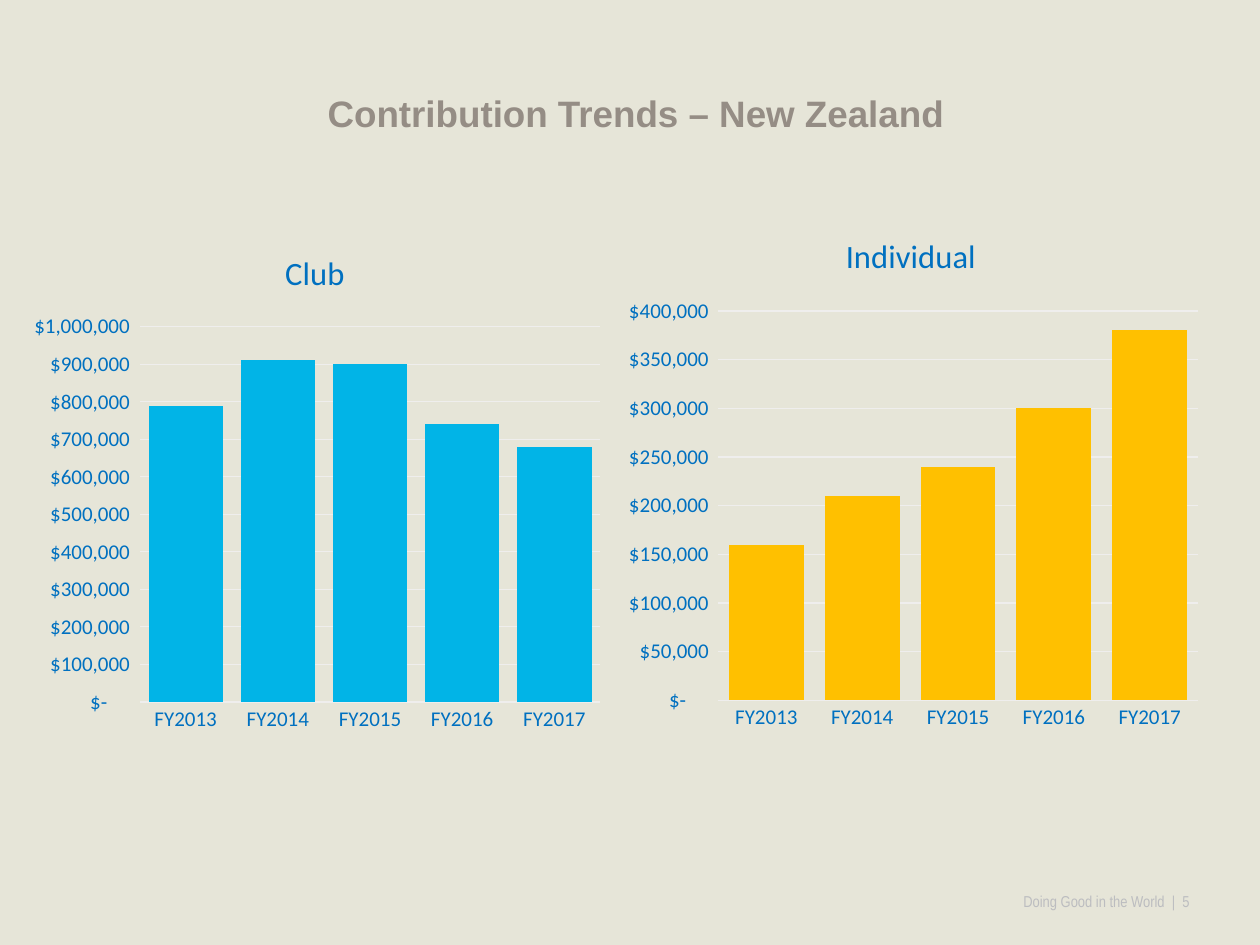
from dataclasses import dataclass

from pptx import Presentation
from pptx.chart.data import CategoryChartData
from pptx.dml.color import RGBColor
from pptx.enum.chart import XL_CHART_TYPE, XL_TICK_MARK
from pptx.enum.text import MSO_ANCHOR, PP_ALIGN
from pptx.util import Inches, Pt


@dataclass(frozen=True)
class Theme:
    back: str = "E6E5D8"
    head: str = "958D85"
    foot: str = "BCBDC0"
    label: str = "0070C0"
    grid: str = "EFEEED"
    club: str = "01B4E7"
    person: str = "FFC000"
    head_size: float = 21
    foot_size: float = 9
    name_size: float = 18.6
    axis_size: float = 12
    base_size: float = 10


THEME = Theme()
YEARS = [f"FY{year}" for year in range(2013, 2018)]
MONEY = '_("$"* #,##0_);_("$"* \\(#,##0\\);_("$"* "-"??_);_(@_)'


def color(code):
    return RGBColor.from_string(code)


def style(font, face, size, code, bold=False):
    font.name = face
    font.size = Pt(size)
    font.bold = bold
    font.color.rgb = color(code)


def place(shape, left, top, width, height):
    shape.left, shape.top = Inches(left), Inches(top)
    shape.width, shape.height = Inches(width), Inches(height)


def add_title(slide, text):
    title = slide.shapes.title
    place(title, 2.5, 0.67, 5.15, 0.45)
    frame = title.text_frame
    frame.text = text
    frame.word_wrap = False
    frame.vertical_anchor = MSO_ANCHOR.TOP
    para = frame.paragraphs[0]
    para.alignment = PP_ALIGN.LEFT
    style(para.runs[0].font, "Arial", THEME.head_size, THEME.head, True)


def add_footer(slide, text):
    box = slide.shapes.add_textbox(Inches(7.75), Inches(7.08), Inches(1.75), Inches(0.15))
    frame = box.text_frame
    frame.margin_left = frame.margin_top = frame.margin_bottom = 0
    frame.margin_right = Inches(0.06)
    frame.word_wrap = True
    frame.text = text
    para = frame.paragraphs[0]
    para.alignment = PP_ALIGN.RIGHT
    style(para.runs[0].font, "Arial Narrow", THEME.foot_size, THEME.foot)


def style_axis(axis):
    axis.major_tick_mark = axis.minor_tick_mark = XL_TICK_MARK.NONE
    style(axis.tick_labels.font, "Calibri", THEME.axis_size, THEME.label)


def style_line(line):
    line.color.rgb = color(THEME.grid)
    line.width = Pt(0.75)


def add_bars(slide, name, values, fill, gap, area, top, step):
    data = CategoryChartData(number_format=MONEY)
    data.categories = YEARS
    data.add_series(name, values)
    chart = slide.shapes.add_chart(
        XL_CHART_TYPE.COLUMN_CLUSTERED, *map(Inches, area), data).chart
    style(chart.font, "Calibri", THEME.base_size, THEME.head)
    chart.has_legend = False

    # Chart title
    chart.has_title = True
    frame = chart.chart_title.text_frame
    frame.text = name
    style(frame.paragraphs[0].runs[0].font, "Calibri", THEME.name_size, THEME.label)
    chart.chart_title.include_in_layout = False

    # Axes
    years, money = chart.category_axis, chart.value_axis
    style_axis(years)
    style_line(years.format.line)
    style_axis(money)
    money.format.line.fill.background()
    money.has_major_gridlines = True
    style_line(money.major_gridlines.format.line)
    money.minimum_scale, money.maximum_scale, money.major_unit = 0, top, step
    money.tick_labels.number_format = MONEY
    money.tick_labels.number_format_is_linked = False

    # Columns
    plot = chart.plots[0]
    plot.gap_width, plot.overlap = gap, -27
    plot.vary_by_categories = False
    bars = plot.series[0].format.fill
    bars.solid()
    bars.fore_color.rgb = color(fill)


def main():
    deck = Presentation()
    deck.slide_width, deck.slide_height = Inches(10), Inches(7.5)
    slide = deck.slides.add_slide(deck.slide_layouts[5])
    slide.background.fill.solid()
    slide.background.fill.fore_color.rgb = color(THEME.back)

    add_footer(slide, "Doing Good in the World  |  5")
    add_bars(slide, "Club", [790000, 910000, 900000, 740000, 680000],
             THEME.club, 24, (0.14, 1.8, 4.72, 4.09), 1000000, 100000)
    add_bars(slide, "Individual", [160000, 210000, 240000, 300000, 380000],
             THEME.person, 28, (4.86, 1.67, 4.74, 4.21), 400000, 50000)
    add_title(slide, "Contribution Trends – New Zealand")
    deck.save("out.pptx")


if __name__ == "__main__":
    main()
